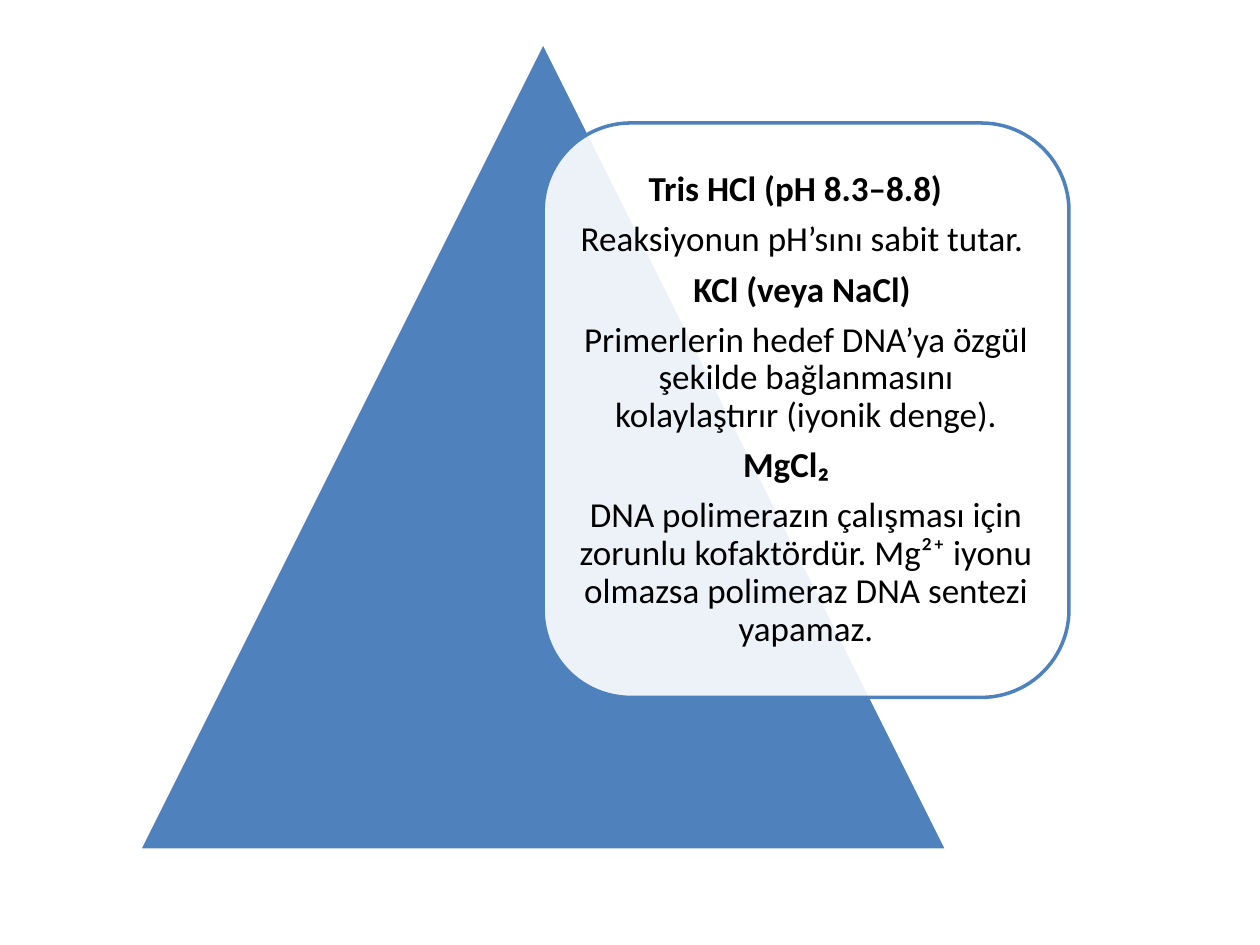
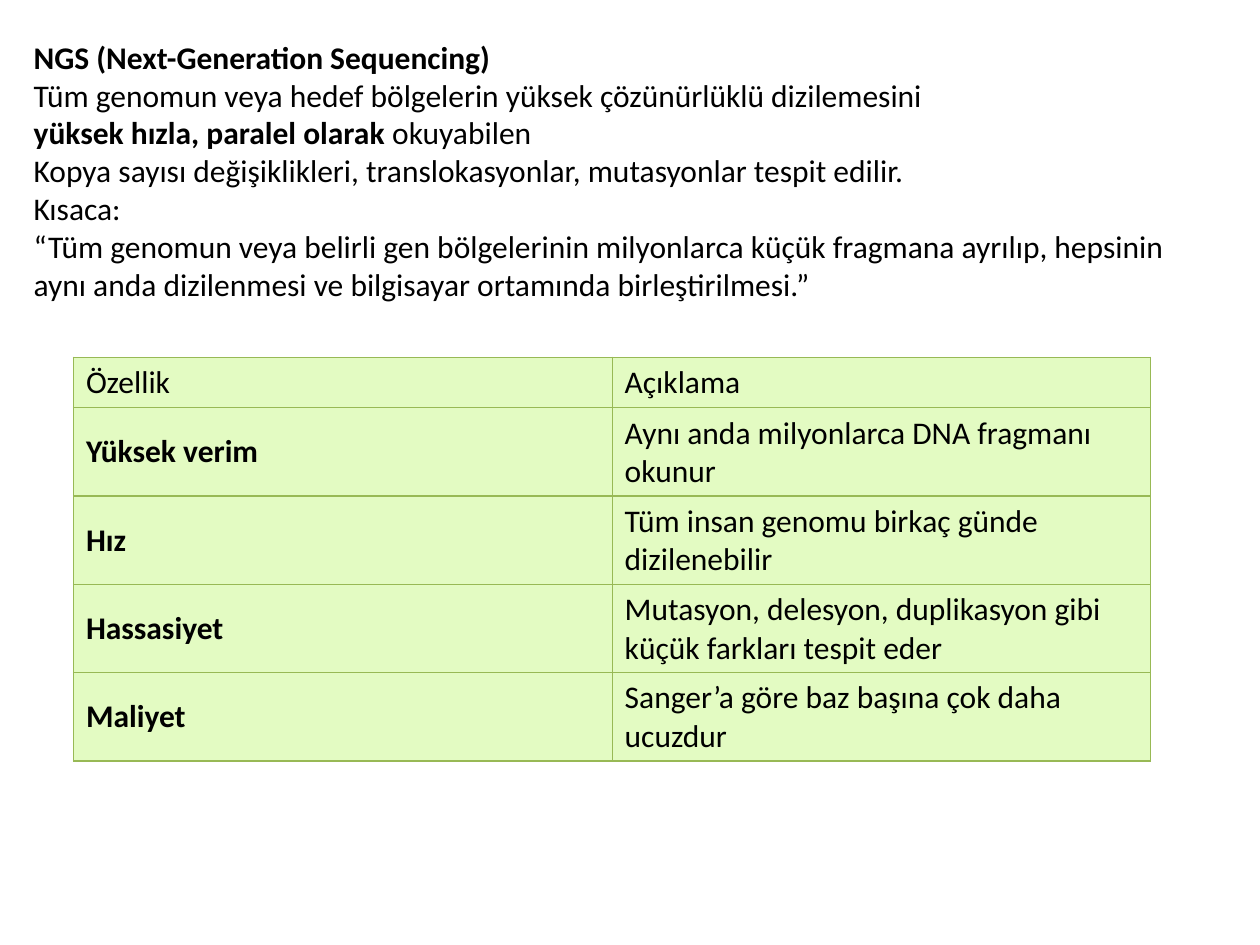
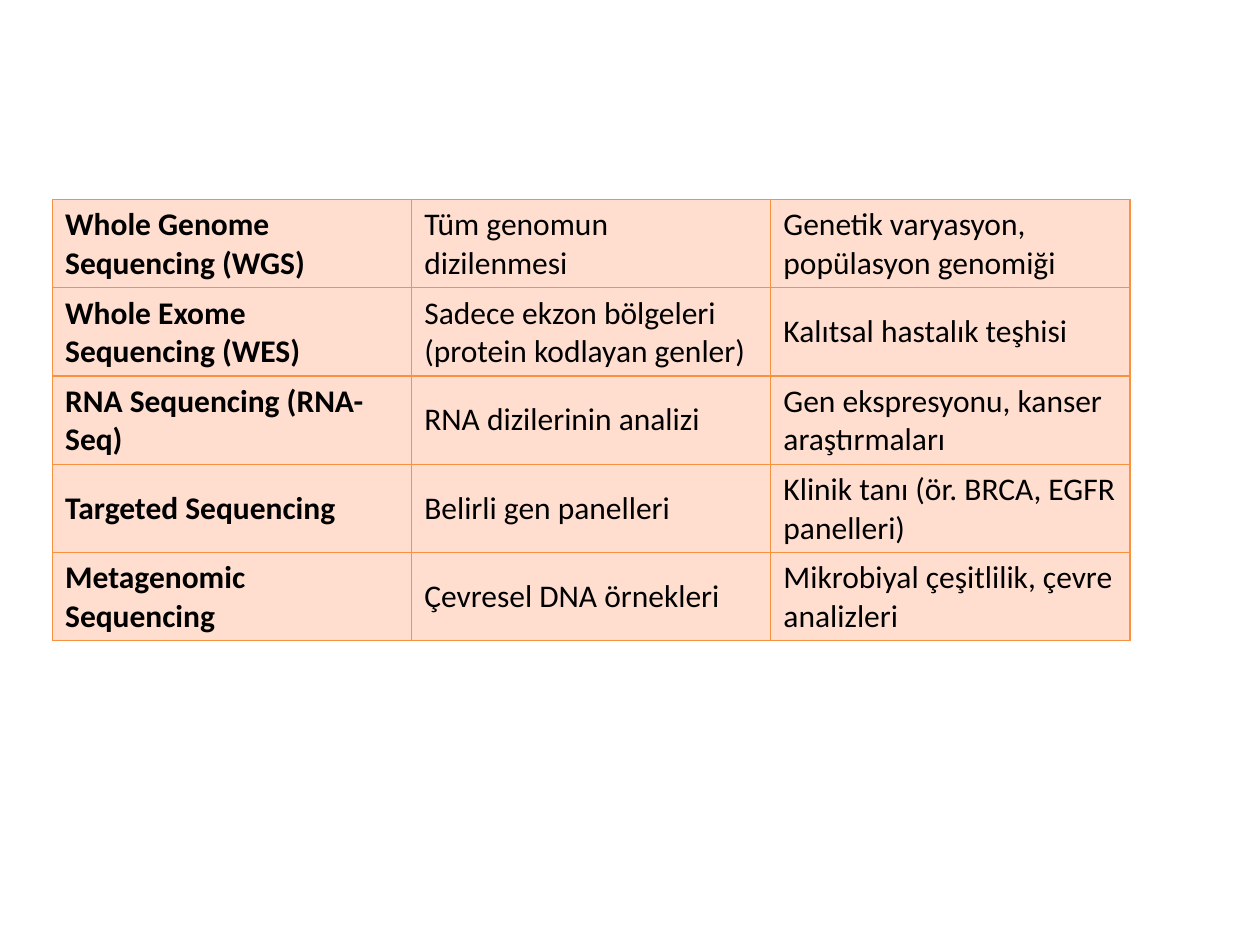
from lxml import etree
from pptx import Presentation
from pptx.dml.color import RGBColor
from pptx.enum import shapes, text
from pptx.oxml.ns import qn
from pptx.util import Cm, Pt

FONT = "Calibri"
BLACK = RGBColor(0x00, 0x00, 0x00)
WHITE = RGBColor(0xFF, 0xFF, 0xFF)
BLUE = RGBColor(0x4F, 0x81, 0xBD)
GREEN = RGBColor(0x98, 0xB9, 0x55)
PALE_GREEN = RGBColor(0xE3, 0xFB, 0xC2)
ORANGE = RGBColor(0xF6, 0x92, 0x40)
PALE_ORANGE = RGBColor(0xFF, 0xDE, 0xD0)

BUFFER_PARTS = [
    ("Tris HCl (pH 8.3–8.8)\t", "Reaksiyonun pH’sını sabit tutar. "),
    ("KCl (veya NaCl) ",
     "Primerlerin hedef DNA’ya özgül şekilde bağlanmasını kolaylaştırır (iyonik denge)."),
    ("MgCl₂\t",
     "DNA polimerazın çalışması için zorunlu kofaktördür. "
     "Mg²⁺ iyonu olmazsa polimeraz DNA sentezi yapamaz."),
]

NGS_INTRO = [
    [("NGS (Next-Generation Sequencing)", True)],
    [("Tüm genomun veya hedef bölgelerin yüksek çözünürlüklü dizilemesini", False)],
    [("yüksek hızla, paralel olarak ", True), ("okuyabilen", False)],
    [("Kopya sayısı değişiklikleri, translokasyonlar, mutasyonlar tespit edilir.", False)],
    [("Kısaca:", False)],
    [("“Tüm genomun veya belirli gen bölgelerinin milyonlarca küçük fragmana ayrılıp, "
      "hepsinin aynı anda dizilenmesi ve bilgisayar ortamında birleştirilmesi.”", False)],
]

NGS_FEATURES = [
    ("Özellik", "Açıklama"),
    ("Yüksek verim", "Aynı anda milyonlarca DNA fragmanı okunur"),
    ("Hız", "Tüm insan genomu birkaç günde dizilenebilir"),
    ("Hassasiyet", "Mutasyon, delesyon, duplikasyon gibi küçük farkları tespit eder"),
    ("Maliyet", "Sanger’a göre baz başına çok daha ucuzdur"),
]

NGS_TYPES = [
    ("Whole Genome Sequencing (WGS)", "Tüm genomun dizilenmesi",
     "Genetik varyasyon, popülasyon genomiği"),
    ("Whole Exome Sequencing (WES)", "Sadece ekzon bölgeleri (protein kodlayan genler)",
     "Kalıtsal hastalık teşhisi"),
    ("RNA Sequencing (RNA-Seq)", "RNA dizilerinin analizi",
     "Gen ekspresyonu, kanser araştırmaları"),
    ("Targeted Sequencing", "Belirli gen panelleri",
     "Klinik tanı (ör. BRCA, EGFR panelleri)"),
    ("Metagenomic Sequencing", "Çevresel DNA örnekleri",
     "Mikrobiyal çeşitlilik, çevre analizleri"),
]

TABLE_WIDTH = Cm(21.72)
HEADER_HEIGHT = Cm(1.02)
ROW_HEIGHT = Cm(1.78)


def write(frame, paragraphs, size=18, align=None, line_spacing=None, space_after=None):
    frame.word_wrap = True
    for index, spans in enumerate(paragraphs):
        para = frame.add_paragraph() if index else frame.paragraphs[0]
        para.alignment = align
        para.line_spacing = line_spacing
        para.space_after = space_after
        for words, bold in spans:
            span = para.add_run()
            span.text = words
            span.font.name = FONT
            span.font.size = Pt(size)
            span.font.bold = bold
            span.font.color.rgb = BLACK


def add_figure(page, kind, area, fill, line):
    figure = page.shapes.add_shape(kind, *area)
    figure.shadow.inherit = False
    figure.fill.solid()
    figure.fill.fore_color.rgb = fill
    figure.line.color.rgb = line
    figure.line.width = Pt(2)
    return figure


def set_opacity(figure, percent):
    color = figure._element.spPr.find(qn("a:solidFill")).find(qn("a:srgbClr"))
    etree.SubElement(color, qn("a:alpha"), val=str(percent * 1000))


def set_borders(cell, color):
    properties = cell._tc.get_or_add_tcPr()
    for side in ("lnL", "lnR", "lnT", "lnB"):
        line = etree.SubElement(properties, qn(f"a:{side}"), w=str(Pt(0.75)))
        fill = etree.SubElement(line, qn("a:solidFill"))
        etree.SubElement(fill, qn("a:srgbClr"), val=str(color))


def add_grid(page, rows, left, top, fill, border, has_header=False):
    heights = [ROW_HEIGHT] * len(rows)
    if has_header:
        heights[0] = HEADER_HEIGHT
    columns = len(rows[0])
    table = page.shapes.add_table(
        len(rows), columns, left, top, TABLE_WIDTH, sum(heights)).table
    table.first_row = has_header
    table.horz_banding = False
    for column in table.columns:
        column.width = TABLE_WIDTH // columns
    for row_index, (values, height) in enumerate(zip(rows, heights)):
        table.rows[row_index].height = height
        for column_index, value in enumerate(values):
            cell = table.cell(row_index, column_index)
            set_borders(cell, border)
            cell.fill.solid()
            cell.fill.fore_color.rgb = fill
            cell.vertical_anchor = text.MSO_ANCHOR.MIDDLE
            bold = column_index == 0 and not (has_header and row_index == 0)
            write(cell.text_frame, [[(value, bold)]])


def build_buffer_page(page):
    add_figure(page, shapes.MSO_SHAPE.ISOSCELES_TRIANGLE,
               (Cm(2.8), Cm(0.84), Cm(16.3), Cm(16.3)), BLUE, WHITE)
    card = add_figure(page, shapes.MSO_SHAPE.ROUNDED_RECTANGLE,
                      (Cm(10.95), Cm(2.48), Cm(10.6), Cm(11.58)), WHITE, BLUE)
    set_opacity(card, 90)
    frame = card.text_frame
    frame.margin_left = frame.margin_right = Cm(0.2)
    frame.margin_top = frame.margin_bottom = Cm(0.2)
    frame.vertical_anchor = text.MSO_ANCHOR.MIDDLE
    paragraphs = []
    for name, role in BUFFER_PARTS:
        paragraphs += [[(name, True)], [(role, False)]]
    write(frame, paragraphs, size=20, align=text.PP_ALIGN.CENTER,
          line_spacing=0.9, space_after=Pt(7))


def build_features_page(page):
    intro = page.shapes.add_textbox(Cm(0.43), Cm(0.64), Cm(23.3), Cm(5.6))
    write(intro.text_frame, NGS_INTRO)
    add_grid(page, NGS_FEATURES, Cm(1.48), Cm(7.2), PALE_GREEN, GREEN, has_header=True)


def build_types_page(page):
    add_grid(page, NGS_TYPES, Cm(1.06), Cm(4.02), PALE_ORANGE, ORANGE)


def main():
    deck = Presentation()
    deck.slide_width = Cm(25.4)
    deck.slide_height = Cm(19.05)
    blank = deck.slide_layouts[6]
    for build in (build_buffer_page, build_features_page, build_types_page):
        build(deck.slides.add_slide(blank))
    deck.save("out.pptx")


if __name__ == "__main__":
    main()
